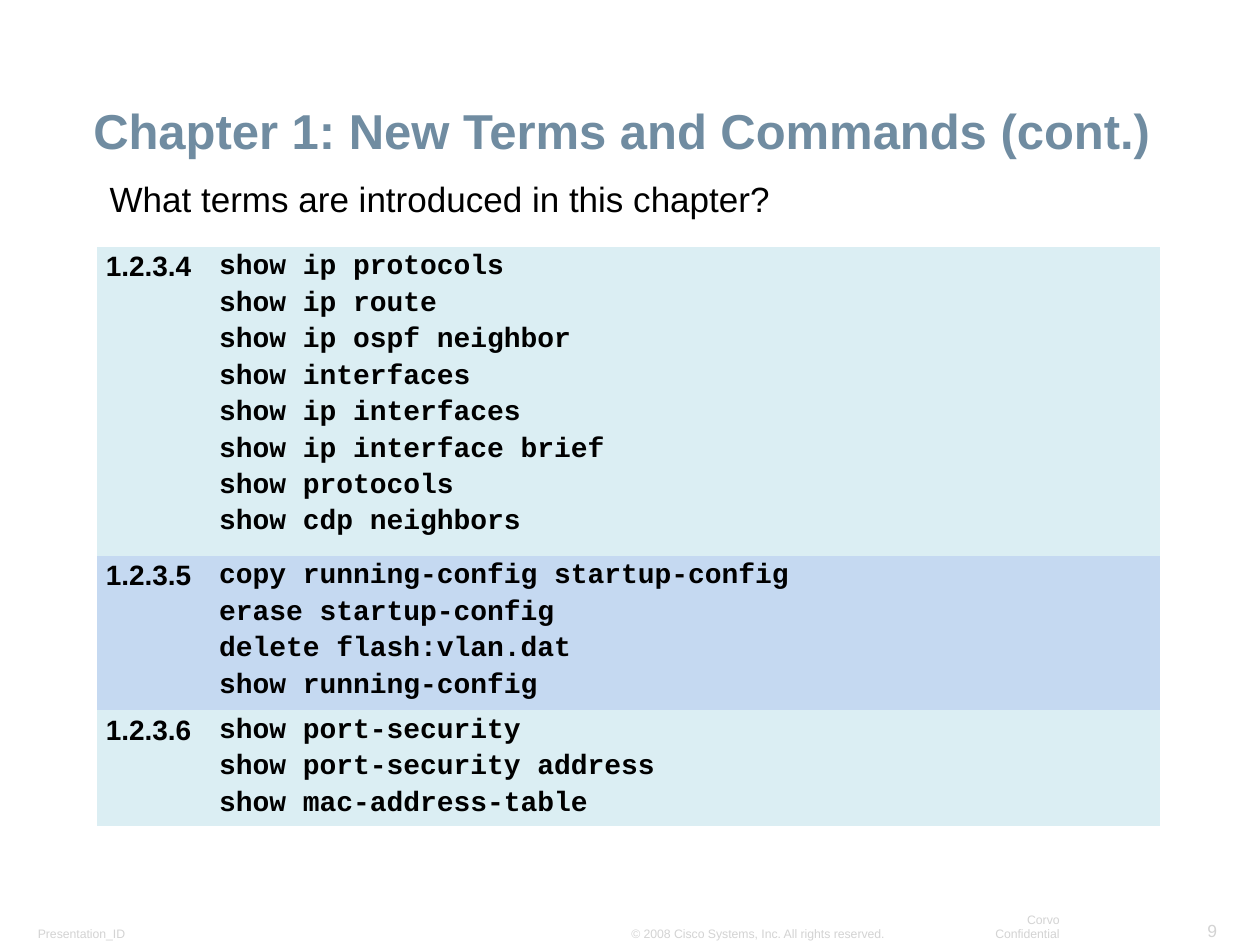
from pptx import Presentation
from pptx.dml.color import RGBColor
from pptx.enum.text import MSO_ANCHOR, PP_ALIGN
from pptx.util import Inches, Pt

COLORS = {
    "title": "708CA1",
    "text": "000000",
    "footer": "D3D3D3",
    "teal": "DBEEF3",
    "blue": "C5D9F1",
}
LINE_HEIGHT = 0.29


def add_run(p, text, size, color, font="Arial", bold=False):
    r = p.add_run()
    r.text = text
    r.font.name = font
    r.font.size = Pt(size)
    r.font.bold = bold
    r.font.color.rgb = RGBColor.from_string(COLORS[color])


def add_text(s, box, text, size, color, anchor, align=PP_ALIGN.LEFT, wrap=True, bold=False):
    tf = s.shapes.add_textbox(*[Inches(v) for v in box]).text_frame
    tf.word_wrap = wrap
    tf.vertical_anchor = anchor
    tf.margin_left = tf.margin_right = Inches(0.09)
    tf.margin_top = tf.margin_bottom = Inches(0.04)
    p = tf.paragraphs[0]
    p.alignment = align
    add_run(p, text, size, color, bold=bold)
    return p


prs = Presentation()
prs.slide_width = Inches(10)
prs.slide_height = Inches(7.5)
s = prs.slides.add_slide(prs.slide_layouts[6])

footers = [
    ((0.21, 7.3, 1.05, 0.21), "Presentation_ID", 7, PP_ALIGN.LEFT),
    ((9.4, 7.25, 0.35, 0.26), "9", 10, PP_ALIGN.RIGHT),
    ((4.92, 7.3, 2.21, 0.21), "© 2008 Cisco Systems, Inc. All rights reserved.", 7, PP_ALIGN.LEFT),
    ((7.54, 7.3, 0.96, 0.21), "Corvo Confidential", 7, PP_ALIGN.RIGHT),
]
for box, text, size, align in footers:
    add_text(s, box, text, size, "footer", MSO_ANCHOR.BOTTOM, align, wrap=False)

p = add_text(s, (0.65, 0.39, 8.91, 0.92), "Chapter 1: New Terms and Commands (cont.)",
             28, "title", MSO_ANCHOR.BOTTOM, bold=True)
p.line_spacing = 0.9

p = add_text(s, (0.78, 1.39, 8.62, 0.54), "What terms are introduced in this chapter?",
             20, "text", MSO_ANCHOR.TOP)
p.line_spacing = 0.95

sections = [
    ("1.2.3.4", "teal", [
        "show ip protocols",
        "show ip route",
        "show ip ospf neighbor",
        "show interfaces",
        "show ip interfaces",
        "show ip interface brief",
        "show protocols",
        "show cdp neighbors",
    ]),
    ("1.2.3.5", "blue", [
        "copy running-config startup-config",
        "erase startup-config",
        "delete flash:vlan.dat",
        "show running-config",
    ]),
    ("1.2.3.6", "teal", [
        "show port-security",
        "show port-security address",
        "show mac-address-table",
    ]),
]
line_count = sum(len(commands) for _, _, commands in sections)
table = s.shapes.add_table(len(sections), 2, Inches(0.77), Inches(1.96),
                           Inches(8.44), Inches(LINE_HEIGHT * line_count)).table
table.first_row = False
table.horz_banding = False
table.columns[0].width = Inches(0.9)
table.columns[1].width = Inches(7.54)

for row, (number, fill, commands) in enumerate(sections):
    table.rows[row].height = Inches(LINE_HEIGHT * len(commands))
    for col, (lines, font) in enumerate([([number], "Arial"), (commands, "Courier New")]):
        cell = table.cell(row, col)
        cell.fill.solid()
        cell.fill.fore_color.rgb = RGBColor.from_string(COLORS[fill])
        cell.margin_left = cell.margin_right = Inches(0.07)
        cell.margin_top = cell.margin_bottom = 0
        tf = cell.text_frame
        for i, line in enumerate(lines):
            p = tf.add_paragraph() if i else tf.paragraphs[0]
            p.line_spacing = 1.15
            add_run(p, line, 16, "text", font, bold=True)

style = table._tbl.tblPr.find("{http://schemas.openxmlformats.org/drawingml/2006/main}tableStyleId")
style.text = "{2D5ABB26-0587-4C30-8999-92F81FD0307C}"

prs.save("out.pptx")
